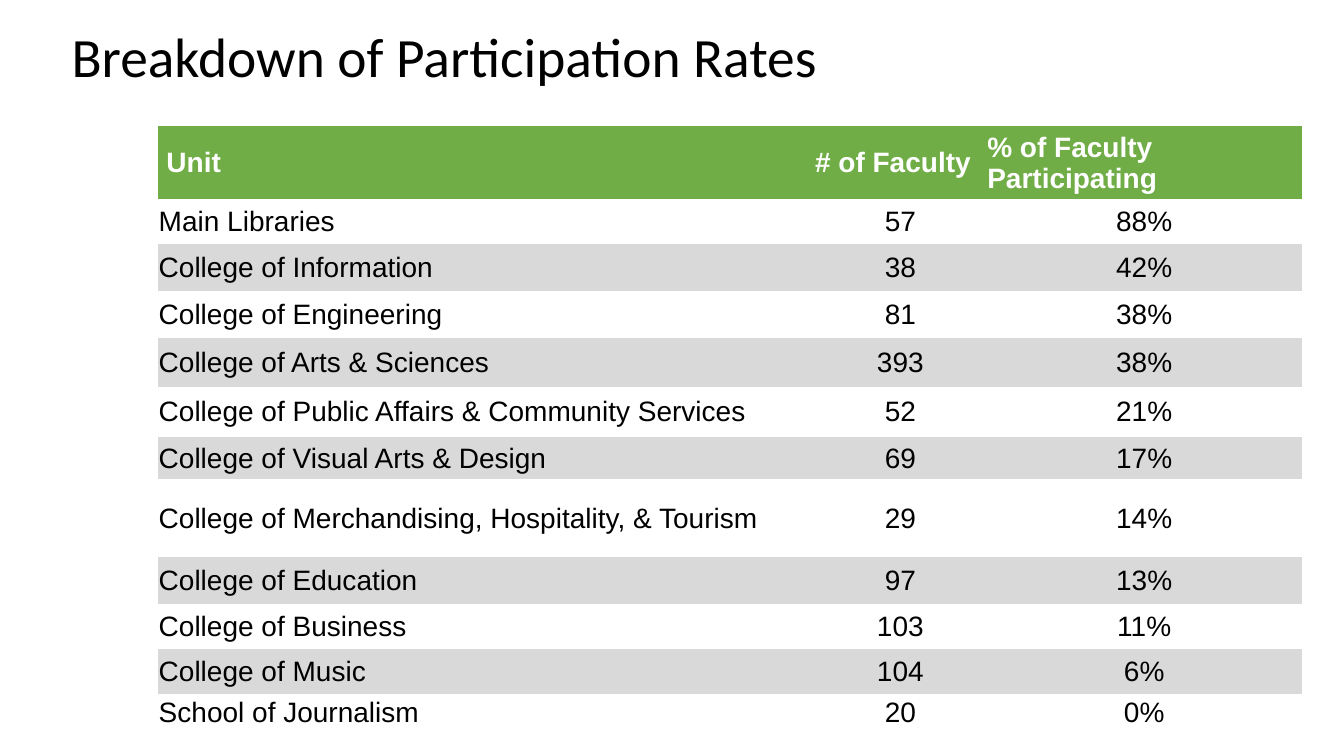
from pptx import Presentation
from pptx import util as u
from pptx.dml.color import RGBColor
from pptx.enum import text

COLORS = {"ink": "000000", "header": "70AD47", "header_text": "FFFFFF", "band": "D9D9D9"}
PLAIN_TABLE_STYLE = "{2D5ABB26-0587-4C30-8999-92F81FD0307C}"

HEADINGS = (" Unit", "# of Faculty", "% of Faculty Participating")
# Unit, number of faculty, share participating, row height in cm
UNITS = [
    ("Main Libraries", 57, 88, 1.12),
    ("College of Information", 38, 42, 1.19),
    ("College of Engineering", 81, 38, 1.19),
    ("College of Arts & Sciences", 393, 38, 1.22),
    ("College of Public Affairs & Community Services", 52, 21, 1.27),
    ("College of Visual Arts & Design", 69, 17, 1.07),
    ("College of Merchandising, Hospitality, & Tourism", 29, 14, 1.96),
    ("College of Education", 97, 13, 1.19),
    ("College of Business", 103, 11, 1.12),
    ("College of Music", 104, 6, 1.14),
    ("School of Journalism", 20, 0, 0.91),
]
HEADER_HEIGHT = 1.85
COLUMN_WIDTHS = (16.54, 4.34, 7.95)


class SlideBuilder:
    title_font = "Calibri"
    table_font = "Arial"

    def __init__(self, presentation):
        self.slide = presentation.slides.add_slide(presentation.slide_layouts[5])

    def format_paragraph(self, paragraph, font, size, color, bold=False,
                         align=text.PP_ALIGN.LEFT):
        paragraph.alignment = align
        paragraph.font.name = font
        paragraph.font.size = u.Pt(size)
        paragraph.font.bold = bold
        paragraph.font.color.rgb = RGBColor.from_string(COLORS[color])

    def title(self, wording, left, top, width, height):
        shape = self.slide.shapes.title
        shape.left, shape.top = u.Cm(left), u.Cm(top)
        shape.width, shape.height = u.Cm(width), u.Cm(height)
        frame = shape.text_frame
        frame.text = wording
        frame.word_wrap = True
        frame.auto_size = text.MSO_AUTO_SIZE.NONE
        frame.vertical_anchor = text.MSO_ANCHOR.MIDDLE
        paragraph = frame.paragraphs[0]
        paragraph.line_spacing = 0.9
        self.format_paragraph(paragraph, self.title_font, 39.6, "ink")

    def table(self, rows, left, top, widths, heights):
        """Draw rows of strings: the first is the header, then every second row is banded."""
        frame = self.slide.shapes.add_table(
            len(rows), len(widths), u.Cm(left), u.Cm(top),
            u.Cm(sum(widths)), u.Cm(sum(heights)))
        table = frame.table
        table.first_row = table.horz_banding = False
        table._tbl.tblPr[0].text = PLAIN_TABLE_STYLE
        for column, width in zip(table.columns, widths):
            column.width = u.Cm(width)
        for index, (row, height) in enumerate(zip(rows, heights)):
            table.rows[index].height = u.Cm(height)
            fill = "header" if index == 0 else "band" if index % 2 == 0 else None
            for column, wording in enumerate(row):
                centred = index > 0 and column > 0
                self.cell(table.cell(index, column), wording, fill, centred)

    def cell(self, cell, wording, fill, centred):
        cell.text = wording
        cell.vertical_anchor = text.MSO_ANCHOR.MIDDLE
        cell.margin_left = cell.margin_right = cell.margin_top = u.Cm(0.02)
        cell.margin_bottom = 0
        if fill:
            cell.fill.solid()
            cell.fill.fore_color.rgb = RGBColor.from_string(COLORS[fill])
        else:
            cell.fill.background()
        is_header = fill == "header"
        self.format_paragraph(
            cell.text_frame.paragraphs[0], self.table_font, 20,
            "header_text" if is_header else "ink", bold=is_header,
            align=text.PP_ALIGN.CENTER if centred else text.PP_ALIGN.LEFT)


def main():
    presentation = Presentation()
    presentation.slide_width, presentation.slide_height = u.Cm(33.87), u.Cm(19.05)
    builder = SlideBuilder(presentation)
    builder.title("Breakdown of Participation Rates", 1.55, 0.33, 20.68, 2.36)
    rows = [HEADINGS] + [(unit, str(faculty), f"{share}%") for unit, faculty, share, _ in UNITS]
    heights = [HEADER_HEIGHT] + [unit[-1] for unit in UNITS]
    builder.table(rows, 3.98, 3.17, COLUMN_WIDTHS, heights)
    presentation.save("out.pptx")


if __name__ == "__main__":
    main()
